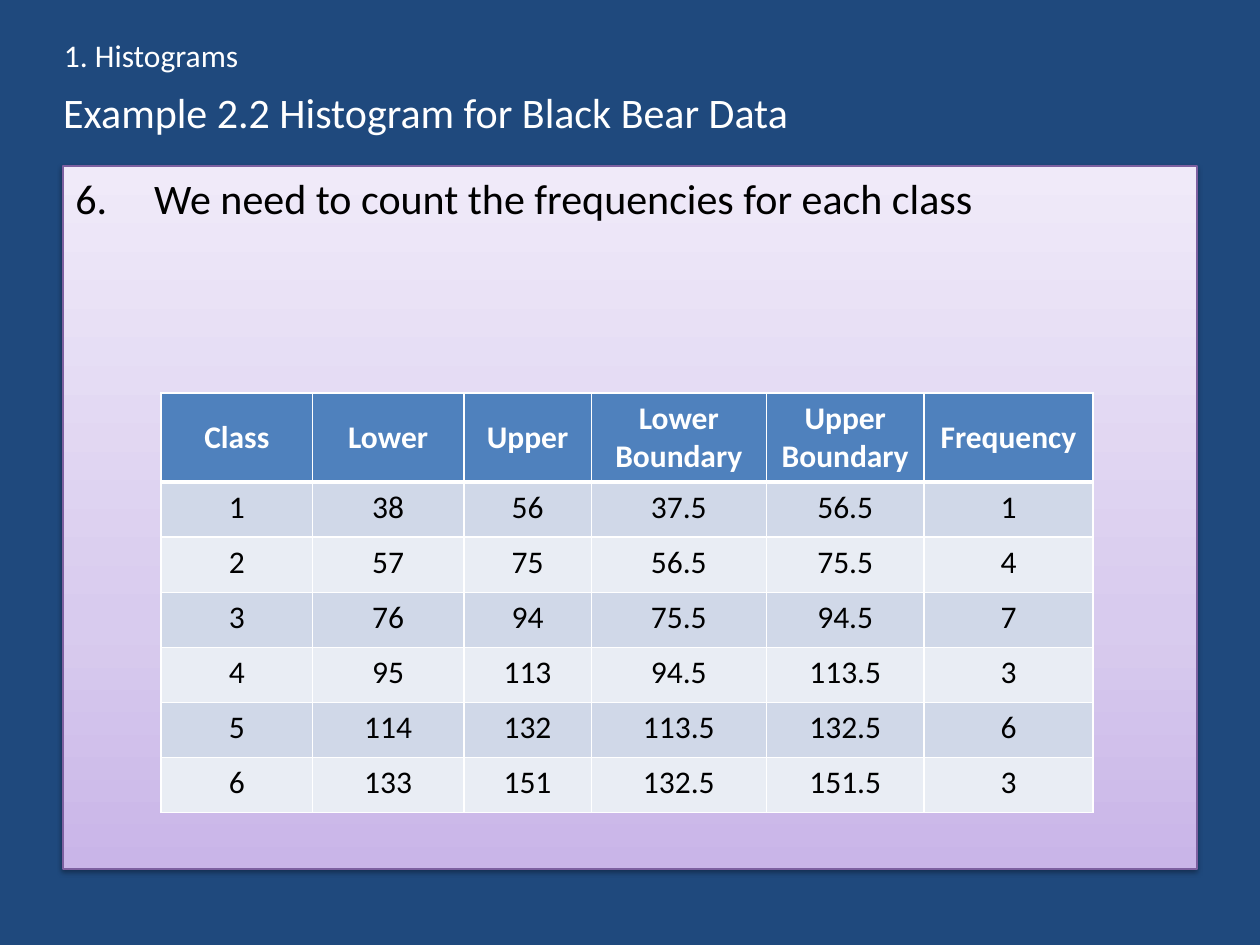
from pptx import Presentation
from pptx.dml.color import RGBColor
from pptx.enum.shapes import MSO_SHAPE
from pptx.enum.text import MSO_ANCHOR, MSO_AUTO_SIZE, PP_ALIGN
from pptx.oxml import parse_xml
from pptx.oxml.ns import nsdecls, qn
from pptx.util import Cm, Pt
from copy import deepcopy

FONT = "Calibri"
WHITE, BLACK = "FFFFFF", "000000"
HEADERS = ["Class", "Lower", "Upper", "Lower Boundary", "Upper Boundary", "Frequency"]
LIMITS = [(38, 56), (57, 75), (76, 94), (95, 113), (114, 132), (133, 151)]
FREQUENCIES = [1, 4, 7, 3, 6, 3]
COLUMN_WIDTHS = [3.05, 3.05, 2.57, 3.53, 3.18, 3.4]
HEADER_HEIGHT, ROW_HEIGHT = 1.8, 1.11


def color(hex_string):
    """Return the colour for a hex string."""
    return RGBColor.from_string(hex_string)


def add_span(para, text, size, hex_string, bold=False):
    """Add one formatted run to a paragraph."""
    span = para.add_run()
    span.text = text
    span.font.name = FONT
    span.font.size = Pt(size)
    span.font.bold = bold
    span.font.color.rgb = color(hex_string)


def place(shape, box):
    """Move a shape to a box of left, top, width and height in centimetres."""
    shape.left, shape.top, shape.width, shape.height = map(Cm, box)


def add_heading(page, box):
    """Place the section label over the slide title."""
    left, top, width, height = box
    title = page.shapes.title
    place(title, (left, top + 0.96, width, height - 0.96))
    title.text_frame.auto_size = MSO_AUTO_SIZE.NONE
    title.text_frame.vertical_anchor = MSO_ANCHOR.MIDDLE
    para = title.text_frame.paragraphs[0]
    para.alignment = PP_ALIGN.LEFT
    add_span(para, "Example 2.2 Histogram for Black Bear Data", 24, WHITE)

    label = page.shapes.add_textbox(Cm(left + 0.02), Cm(top), Cm(width - 0.18), Cm(1.02))
    label.text_frame.word_wrap = True
    add_span(label.text_frame.paragraphs[0], "1. Histograms", 18, WHITE)


def fill_gradient(shape, stops):
    """Fill a shape from bottom to top with three colour stops."""
    shape.fill.gradient()
    shape.fill.gradient_angle = 90
    stop_list = shape._element.spPr.find(".//" + qn("a:gsLst"))
    stop_list.append(deepcopy(stop_list[-1]))
    for stop, (position, hex_string) in zip(shape.fill.gradient_stops, stops):
        stop.position = position
        stop.color.rgb = color(hex_string)


def add_shadow(shape):
    """Give a shape a soft shadow below it."""
    shape.shadow.inherit = False
    effects = shape._element.spPr.find(qn("a:effectLst"))
    effects.append(parse_xml(
        f'<a:outerShdw {nsdecls("a")} blurRad="{Pt(3.1)}" dist="{Pt(1.6)}" '
        'dir="5400000" rotWithShape="0"><a:srgbClr val="000000">'
        '<a:alpha val="38000"/></a:srgbClr></a:outerShdw>'))


def add_step_panel(page, box):
    """Place the gradient panel with its numbered step."""
    panel = page.shapes.add_shape(MSO_SHAPE.RECTANGLE, *map(Cm, box))
    fill_gradient(panel, [(0, "C9B5E8"), (0.35, "D8CBEE"), (1, "F0EAF9")])
    panel.line.color.rgb = color("7D60A0")
    panel.line.width = Pt(0.75)
    add_shadow(panel)
    frame = panel.text_frame
    frame.word_wrap = True
    frame.vertical_anchor = MSO_ANCHOR.TOP
    para = frame.paragraphs[0]
    para.alignment = PP_ALIGN.LEFT
    properties = para._p.get_or_add_pPr()
    properties.set("marL", str(Cm(1.59)))
    properties.set("indent", str(-Cm(1.59)))
    properties.append(parse_xml(
        f'<a:buFont {nsdecls("a")} typeface="+mj-lt"/>'))
    properties.append(parse_xml(
        f'<a:buAutoNum {nsdecls("a")} type="arabicPeriod" startAt="6"/>'))
    add_span(para, "We need to count the frequencies for each class", 24, BLACK)


def add_borders(cell, widths):
    """Draw white borders of the given point widths around a cell."""
    properties = cell._tc.get_or_add_tcPr()
    for side, width in widths.items():
        properties.append(parse_xml(
            f'<a:ln{side} {nsdecls("a")} w="{Pt(width)}"><a:solidFill>'
            f'<a:srgbClr val="{WHITE}"/></a:solidFill></a:ln{side}>'))


def add_frequency_table(page, box):
    """Place the table of class limits, boundaries and frequencies."""
    rows = [HEADERS] + [
        [number, lower, upper, lower - 0.5, upper + 0.5, frequency]
        for number, ((lower, upper), frequency) in enumerate(zip(LIMITS, FREQUENCIES), 1)]
    table = page.shapes.add_table(len(rows), len(HEADERS), *map(Cm, box)).table
    for column, width in zip(table.columns, COLUMN_WIDTHS):
        column.width = Cm(width)
    for index, values in enumerate(rows):
        header = index == 0
        table.rows[index].height = Cm(HEADER_HEIGHT if header else ROW_HEIGHT)
        fill = "4F81BD" if header else ("E9EDF4", "D0D8E8")[index % 2]
        widths = {"L": 1, "R": 1, "T": 3 if index == 1 else 1, "B": 3 if header else 1}
        for cell, value in zip(table.rows[index].cells, values):
            add_borders(cell, widths)
            cell.fill.solid()
            cell.fill.fore_color.rgb = color(fill)
            cell.vertical_anchor = MSO_ANCHOR.MIDDLE if header else MSO_ANCHOR.TOP
            cell.margin_left = cell.margin_right = Cm(0.27)
            para = cell.text_frame.paragraphs[0]
            para.alignment = PP_ALIGN.CENTER
            add_span(para, str(value), 18, WHITE if header else BLACK, header)


def main():
    """Build the deck and save it."""
    deck = Presentation()
    deck.slide_width, deck.slide_height = Cm(25.4), Cm(19.05)
    page = deck.slides.add_slide(deck.slide_layouts[5])
    page.background.fill.solid()
    page.background.fill.fore_color.rgb = color("1F497D")
    add_heading(page, (1.02, 0.61, 22.86, 2.33))
    add_step_panel(page, (1.27, 3.35, 22.86, 14.17))
    table_height = HEADER_HEIGHT + ROW_HEIGHT * len(LIMITS)
    add_frequency_table(page, (3.25, 7.92, sum(COLUMN_WIDTHS), table_height))
    deck.save("out.pptx")


if __name__ == "__main__":
    main()
